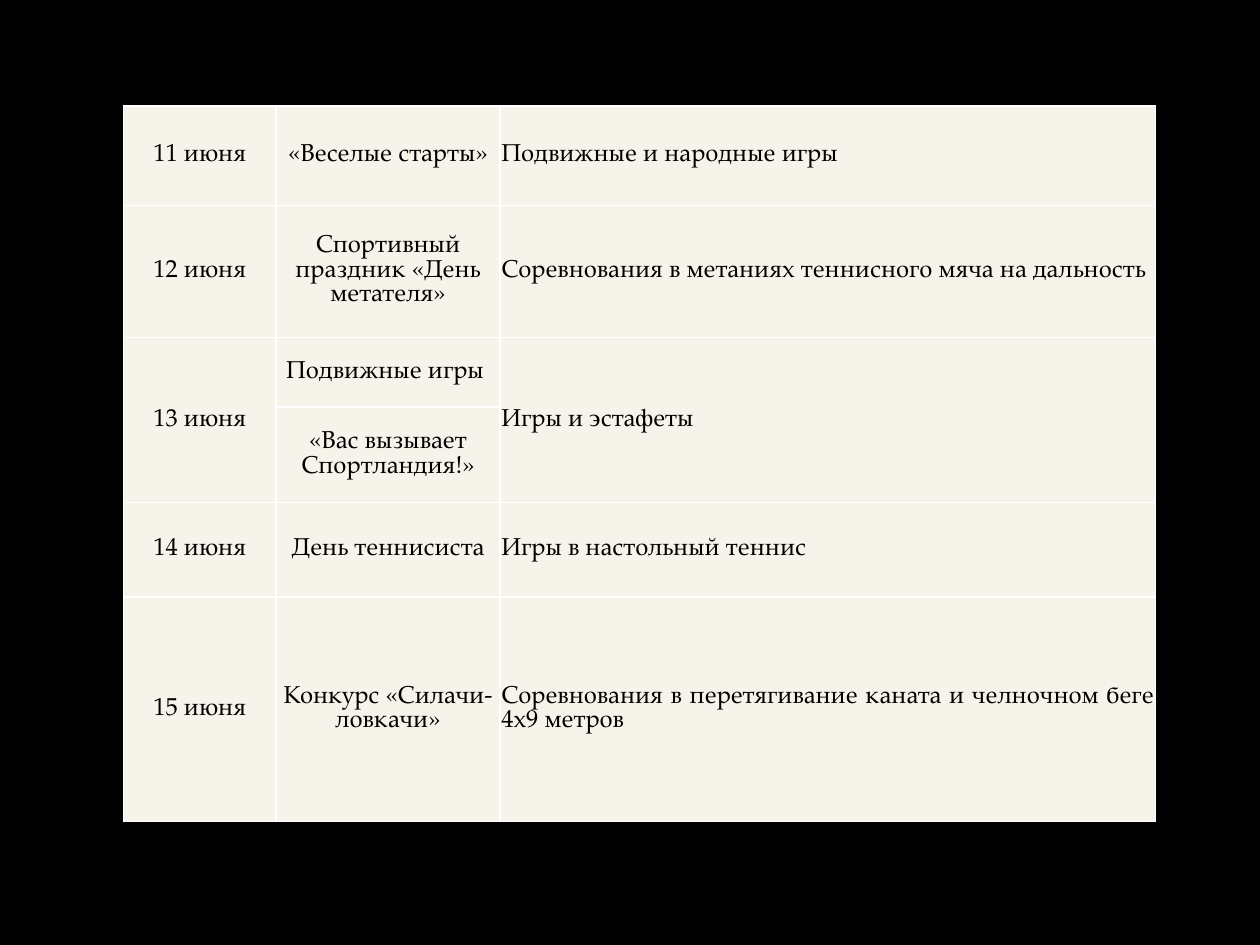
from pptx import Presentation
from pptx.dml.color import RGBColor as RGB
from pptx.enum.text import MSO_ANCHOR as Anchor, PP_ALIGN as Align
from pptx.oxml import parse_xml
from pptx.oxml.ns import nsdecls
from pptx.util import Inches, Pt

COLORS = {"back": "000000", "cell": "F6F3EA", "text": "000000", "line": "FFFFFF"}
WIDTHS = [1.21, 1.78, 5.2]
HEIGHTS = [0.79, 1.05, 0.55, 0.76, 0.75, 1.78]
ALIGNS = [Align.CENTER, Align.CENTER, Align.JUSTIFY]
EVENTS = [
    ("11 июня", "«Веселые старты»", "Подвижные и народные игры"),
    ("12 июня", "Спортивный праздник «День метателя»",
     "Соревнования в метаниях теннисного мяча на дальность"),
    ("13 июня", "Подвижные игры ", "Игры и эстафеты"),
    ("", "«Вас вызывает Спортландия!»", ""),
    ("14 июня", "День теннисиста", "Игры в настольный теннис"),
    ("15 июня", "Конкурс «Силачи-ловкачи»",
     "Соревнования в перетягивание каната и челночном беге 4х9 метров"),
]
MERGES = [((2, 0), (3, 0)), ((2, 2), (3, 2))]


class Deck:
    """Holds the style and the current slide."""

    def __init__(self, slide, font="TeX Gyre Pagella", size=14):
        self.slide, self.font, self.size = slide, font, size

    def fill(self, fill, name):
        fill.solid()
        fill.fore_color.rgb = RGB.from_string(COLORS[name])

    def back(self):
        self.fill(self.slide.background.fill, "back")

    def edge(self, cell):
        props = cell._tc.get_or_add_tcPr()
        for spot, side in enumerate(("lnL", "lnR", "lnT", "lnB")):
            props.insert(spot, parse_xml(
                f'<a:{side} {nsdecls("a")} w="{Pt(1)}"><a:solidFill>'
                f'<a:srgbClr val="{COLORS["line"]}"/></a:solidFill></a:{side}>'))

    def cell(self, cell, text, align):
        self.fill(cell.fill, "cell")
        self.edge(cell)
        cell.vertical_anchor = Anchor.MIDDLE
        cell.margin_left = cell.margin_right = cell.margin_top = Inches(0.01)
        cell.margin_bottom = 0
        cell.text = text
        para = cell.text_frame.paragraphs[0]
        para.alignment = align
        para.line_spacing = Pt(self.size)
        para.font.name = self.font
        para.font.size = Pt(self.size)
        para.font.color.rgb = RGB.from_string(COLORS["text"])

    def table(self, left, top, rows):
        table = self.slide.shapes.add_table(
            len(rows), len(WIDTHS), Inches(left), Inches(top),
            Inches(sum(WIDTHS)), Inches(sum(HEIGHTS))).table
        table.first_row = table.horz_banding = False
        for col, width in zip(table.columns, WIDTHS):
            col.width = Inches(width)
        for row, height, texts in zip(table.rows, HEIGHTS, rows):
            row.height = Inches(height)
            for cell, text, align in zip(row.cells, texts, ALIGNS):
                self.cell(cell, text, align)
        for first, last in MERGES:
            table.cell(*first).merge(table.cell(*last))


def main():
    prs = Presentation()
    prs.slide_width, prs.slide_height = Inches(10), Inches(7.5)
    deck = Deck(prs.slides.add_slide(prs.slide_layouts[6]))
    deck.back()
    deck.table(0.98, 0.84, EVENTS)
    prs.save("out.pptx")


if __name__ == "__main__":
    main()
